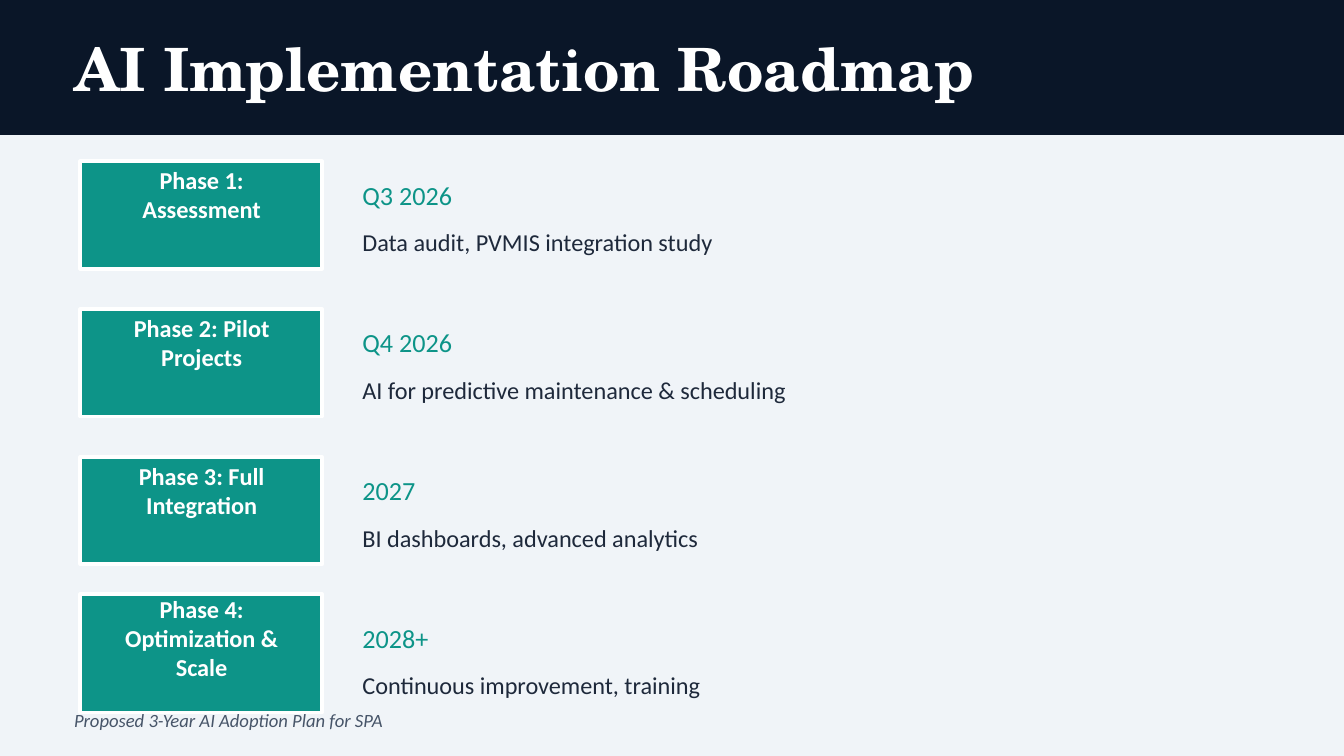
from pptx import Presentation
from pptx.dml.color import RGBColor
from pptx.enum.shapes import MSO_SHAPE as Shape
from pptx.enum.text import MSO_ANCHOR as Anchor, MSO_AUTO_SIZE as AutoSize, PP_ALIGN as Align
from pptx.util import Cm, Pt

NAVY, TEAL, WHITE = "0A1628", "0D9488", "FFFFFF"
PALE, INK, SLATE = "F0F4F8", "1E293B", "475569"
BODY_FONT, TITLE_FONT = "Calibri", "TeX Gyre Schola"

# Phase, date, work
PHASES = [
    ("Phase 1: Assessment", "Q3 2026", "Data audit, PVMIS integration study"),
    ("Phase 2: Pilot Projects", "Q4 2026", "AI for predictive maintenance & scheduling"),
    ("Phase 3: Full Integration", "2027", "BI dashboards, advanced analytics"),
    ("Phase 4: Optimization & Scale", "2028+", "Continuous improvement, training"),
]
FIRST_ROW, ROW_PITCH = 3.3, 2.794
BOX_LEFT, BOX_WIDTH, BOX_HEIGHT = 1.52, 4.57, 2.03
LAST_BOX_TOP, LAST_BOX_HEIGHT = 11.23, 2.24  # taller, for a three-line label
DETAIL_LEFT = 6.6


def color(value):
    return RGBColor.from_string(value)


def place(shape, left, top, width, height):
    shape.left, shape.top = Cm(left), Cm(top)
    shape.width, shape.height = Cm(width), Cm(height)


def write(shape, text, size, ink, font=BODY_FONT, bold=False, italic=False,
          align=Align.LEFT, inset=True):
    frame = shape.text_frame
    frame.word_wrap = True
    frame.auto_size = AutoSize.NONE
    frame.vertical_anchor = Anchor.MIDDLE
    if not inset:
        frame.margin_left = frame.margin_right = 0
        frame.margin_top = frame.margin_bottom = 0
    paragraph = frame.paragraphs[0]
    paragraph.alignment = align
    run = paragraph.add_run()
    run.text = text
    run.font.name, run.font.size = font, Pt(size)
    run.font.bold, run.font.italic = bold, italic
    run.font.color.rgb = color(ink)


def add_label(slide, bounds, text, size, ink, **style):
    label = slide.shapes.add_textbox(*map(Cm, bounds))
    write(label, text, size, ink, **style)


def add_block(slide, bounds, fill, outline, weight):
    block = slide.shapes.add_shape(Shape.RECTANGLE, *map(Cm, bounds))
    block.shadow.inherit = False
    block.fill.solid()
    block.fill.fore_color.rgb = color(fill)
    block.line.color.rgb = color(outline)
    block.line.width = Pt(weight)
    return block


def add_header(slide, text):
    band = add_block(slide, (0, 0, 25.4, 2.54), NAVY, NAVY, 1)
    title = slide.shapes.title
    place(title, 1.4, 0.38, 22.86, 1.78)
    write(title, text, 32, WHITE, font=TITLE_FONT, bold=True, inset=False)
    # Put the band behind the title
    title.element.addprevious(band.element)


def add_phase(slide, text_top, box_top, box_height, phase, date, work):
    add_block(slide, (BOX_LEFT, box_top, BOX_WIDTH, box_height), TEAL, WHITE, 2)
    add_label(slide, (1.78, text_top, 4.06, 0.76), phase, 13, WHITE,
              bold=True, align=Align.CENTER)
    add_label(slide, (DETAIL_LEFT, text_top, 5.08, 0.76), date, 14, TEAL)
    add_label(slide, (DETAIL_LEFT, text_top + 0.76, 17.78, 1.02), work, 13, INK)


def main():
    deck = Presentation()
    deck.slide_width, deck.slide_height = Cm(25.4), Cm(14.29)
    slide = deck.slides.add_slide(deck.slide_layouts[5])
    slide.background.fill.solid()
    slide.background.fill.fore_color.rgb = color(PALE)

    add_header(slide, "AI Implementation Roadmap")

    # Roadmap rows
    for row, details in enumerate(PHASES):
        text_top = FIRST_ROW + row * ROW_PITCH
        box_top, box_height = text_top - 0.25, BOX_HEIGHT
        if row == len(PHASES) - 1:
            box_top, box_height = LAST_BOX_TOP, LAST_BOX_HEIGHT
        add_phase(slide, text_top, box_top, box_height, *details)

    # Footnote
    add_label(slide, (1.4, 13.21, 22.86, 0.81), "Proposed 3-Year AI Adoption Plan for SPA",
              10, SLATE, italic=True, inset=False)
    deck.save("out.pptx")


if __name__ == "__main__":
    main()
